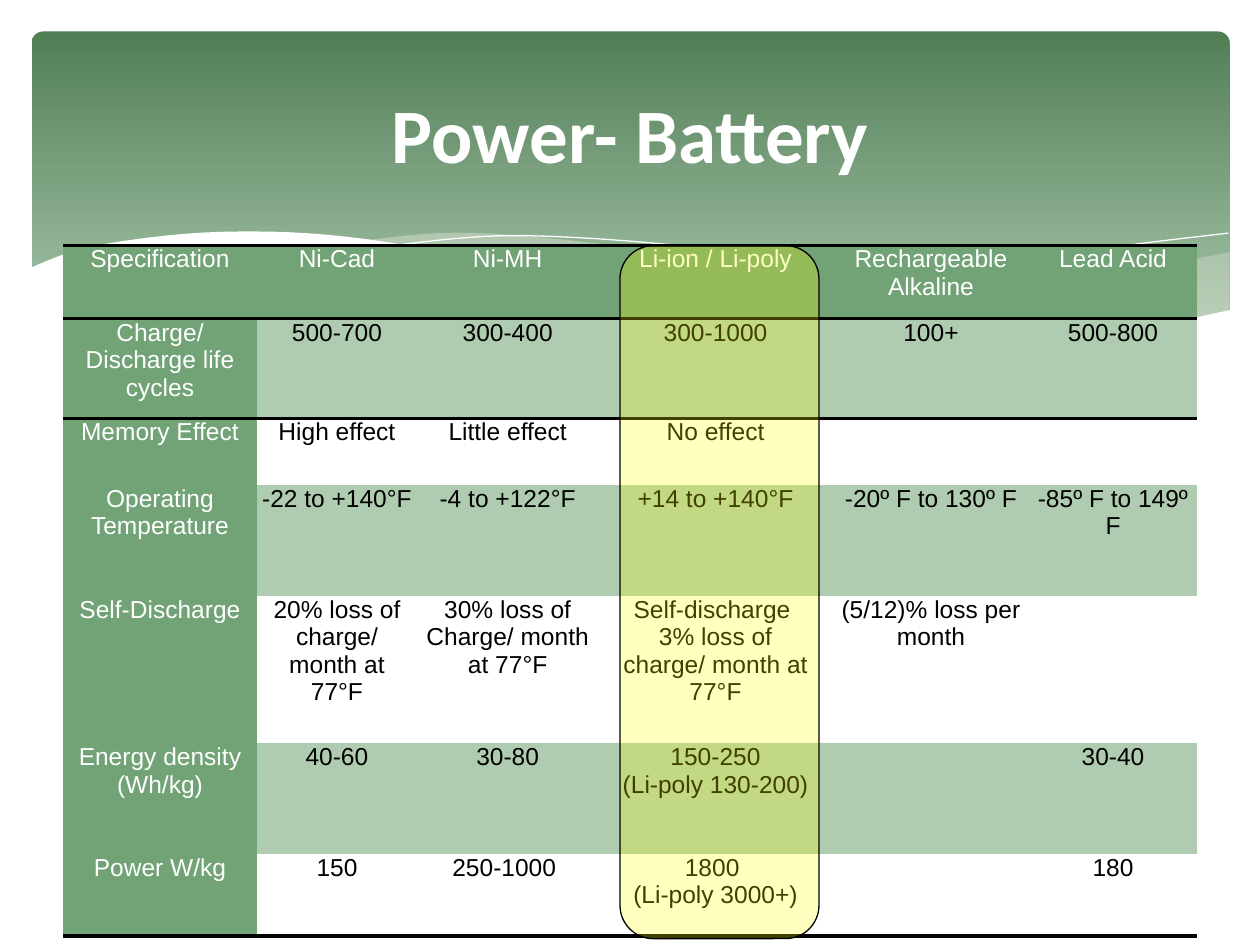
from dataclasses import dataclass
from typing import Optional

import pptx
import pptx.dml.color
import pptx.enum.shapes
import pptx.enum.text
import pptx.oxml
import pptx.oxml.ns
import pptx.util
from pptx.util import Inches

WHITE, BLACK = "FFFFFF", "000000"
GREEN, PALE_GREEN, MIST = "72A376", "B0CCB0", "EAEBDE"
NO_TABLE_STYLE = "{2D5ABB26-0587-4C30-8999-92F81FD0307C}"
CURVE_STEPS = 8

Point = tuple[float, float]


@dataclass
class Wave:
    edges: list[list[Point]]
    fill: Optional[str] = None
    alpha: int = 100


@dataclass
class Row:
    height: float
    texts: list[str]
    fill: Optional[str] = None
    top_rule: bool = False
    bottom_rule: bool = False


WAVES = [
    Wave([[(9.76, 2), (8.61, 2.23), (6.61, 2.65)],
          [(6.61, 2.65), (8.1, 2.78), (9.76, 2.47)]], MIST, 29),
    Wave([[(8.93, 2.73), (7.41, 2.47), (5.41, 2.03), (3.8, 1.85), (2.86, 1.91)],
          [(2.86, 1.91), (4.49, 2.22), (6.34, 2.61), (7.85, 2.78), (8.93, 2.73)]], MIST, 40),
    Wave([[(3.09, 1.95), (4.16, 1.87), (5.82, 2), (7.6, 2.33), (9.07, 2.72)]]),
    Wave([[(6.13, 2.57), (7.48, 2.23), (8.66, 1.99), (9.75, 1.85)]]),
    Wave([[(9.77, 2.46), (8.09, 2.77), (6.48, 2.62), (4.47, 2.2), (2.92, 1.9),
           (1.77, 1.84), (0.76, 1.95), (0.23, 2.13)],
          [(0.23, 3.29), (9.77, 3.29)]], WHITE),
]

COLUMN_WIDTHS = [1.54, 1.27, 1.44, 1.86, 1.56, 1.33]
ROWS = [
    Row(0.58, ["Specification", "Ni-Cad", "Ni-MH", "Li-ion / Li-poly",
               "Rechargeable Alkaline", "Lead Acid"], GREEN, True, True),
    Row(0.79, ["Charge/Discharge life cycles", "500-700", "300-400", "300-1000",
               "100+", "500-800"], PALE_GREEN, top_rule=True),
    Row(0.53, ["Memory Effect", "High effect", "Little effect", "No effect", "", ""]),
    Row(0.88, ["Operating Temperature", "-22 to +140°F", "-4 to +122°F", "+14 to +140°F",
               "-20º F to 130º F", "-85º F to 149º F"], PALE_GREEN),
    Row(1.17, ["Self-Discharge", "20% loss of charge/ month at 77°F",
               "30% loss of\nCharge/ month at 77°F",
               "Self-discharge \n3% loss of\ncharge/ month at 77°F",
               "(5/12)% loss per month", ""], WHITE),
    Row(0.88, ["Energy density\n(Wh/kg)", "40-60", "30-80",
               "150-250\n(Li-poly 130-200)", "", "30-40"], PALE_GREEN),
    Row(0.65, ["Power W/kg", "150", "250-1000 ", "1800 \n(Li-poly 3000+)", "", "180"],
        bottom_rule=True),
]


def color(value: str):
    return pptx.dml.color.RGBColor.from_string(value)


def paint(fill, value: Optional[str], alpha: int = 100) -> None:
    if value is None:
        fill.background()
        return
    fill.solid()
    fill.fore_color.rgb = color(value)
    if alpha < 100:
        tint = fill._xPr.find(".//" + pptx.oxml.ns.qn("a:srgbClr"))
        tint.append(pptx.oxml.parse_xml(
            f'<a:alpha {pptx.oxml.ns.nsdecls("a")} val="{alpha * 1000}"/>'))


def write(frame, text: str, *, size: float, font: str, ink: str, bold: bool = False) -> None:
    frame.word_wrap = True
    frame.text = text
    for para in frame.paragraphs:
        para.alignment = pptx.enum.text.PP_ALIGN.CENTER
        for span in para.runs:
            span.font.size = pptx.util.Pt(size)
            span.font.name = font
            span.font.bold = bold
            span.font.color.rgb = color(ink)


def add_round_box(page, left: float, top: float, width: float, height: float, corner: float):
    box = page.shapes.add_shape(pptx.enum.shapes.MSO_SHAPE.ROUNDED_RECTANGLE,
                                Inches(left), Inches(top), Inches(width), Inches(height))
    box.adjustments[0] = corner
    box.shadow.inherit = False
    return box


def add_banner(page) -> None:
    banner = add_round_box(page, 0.25, 0.25, 9.51, 2.7, 0.034)
    banner.line.fill.background()
    banner.fill.gradient()
    banner.fill.gradient_angle = 270
    for stop, (position, value) in zip(banner.fill.gradient_stops,
                                       [(0, "527E56"), (0.9, "AAC8AD")]):
        stop.position = position
        stop.color.rgb = color(value)


def blend(a: float, b: float, c: float, d: float, t: float) -> float:
    return b + t / 2 * (c - a + t * (2 * a - 5 * b + 4 * c - d + t * (3 * (b - c) + d - a)))


def smooth_curve(knots: list[Point]) -> list[Point]:
    padded = [knots[0], *knots, knots[-1]]
    curve = [knots[0]]
    for group in zip(padded, padded[1:], padded[2:], padded[3:]):
        xs, ys = zip(*group)
        for step in range(1, CURVE_STEPS + 1):
            t = step / CURVE_STEPS
            curve.append((blend(*xs, t), blend(*ys, t)))
    return curve


def add_wave(page, wave: Wave) -> None:
    start, *rest = [(Inches(x), Inches(y))
                    for edge in wave.edges for x, y in smooth_curve(edge)]
    builder = page.shapes.build_freeform(*start)
    builder.add_line_segments(rest, close=wave.fill is not None)
    shape = builder.convert_to_shape()
    shape.shadow.inherit = False
    paint(shape.fill, wave.fill, wave.alpha)
    paint(shape.line.fill, None if wave.fill else WHITE)
    if wave.fill is None:
        shape.line.width = 0


def add_rule(cell, side: str) -> None:
    cell._tc.get_or_add_tcPr().append(pptx.oxml.parse_xml(
        f'<a:{side} {pptx.oxml.ns.nsdecls("a")} w="{pptx.util.Pt(2.25)}">'
        f'<a:solidFill><a:srgbClr val="{BLACK}"/></a:solidFill></a:{side}>'))


def fill_cell(cell, row: Row, text: str, is_heading: bool) -> None:
    cell.margin_left = cell.margin_right = Inches(0.03)
    cell.margin_top = cell.margin_bottom = 0
    if row.top_rule:
        add_rule(cell, "lnT")
    if row.bottom_rule:
        add_rule(cell, "lnB")
    paint(cell.fill, GREEN if is_heading else row.fill)
    if text:
        write(cell.text_frame, text, size=14, font="Arial", ink=WHITE if is_heading else BLACK)


def add_battery_table(page) -> None:
    frame = page.shapes.add_table(len(ROWS), len(COLUMN_WIDTHS), Inches(0.5), Inches(1.95),
                                  Inches(sum(COLUMN_WIDTHS)),
                                  Inches(sum(row.height for row in ROWS)))
    table = frame.table
    table.horz_banding = table.first_row = False
    frame.element.find(".//" + pptx.oxml.ns.qn("a:tableStyleId")).text = NO_TABLE_STYLE
    for column, width in zip(table.columns, COLUMN_WIDTHS):
        column.width = Inches(width)
    for row_index, row in enumerate(ROWS):
        table.rows[row_index].height = Inches(row.height)
        for column_index, text in enumerate(row.texts):
            fill_cell(table.cell(row_index, column_index), row, text,
                      row_index == 0 or column_index == 0)


def add_highlight(page) -> None:
    highlight = add_round_box(page, 2.96, 3.91, 5.5, 1.58, 0.167)
    highlight.rotation = 90
    paint(highlight.fill, "FFFF00", 25)
    paint(highlight.line.fill, BLACK)
    highlight.line.width = pptx.util.Pt(0.75)


def main() -> None:
    deck = pptx.Presentation()
    deck.slide_width, deck.slide_height = Inches(10), Inches(7.5)
    page = deck.slides.add_slide(deck.slide_layouts[5])
    add_banner(page)
    for wave in WAVES:
        add_wave(page, wave)
    title = page.shapes.title
    title.left, title.top = Inches(0.5), Inches(0.37)
    title.width, title.height = Inches(9), Inches(1.37)
    title.text_frame.vertical_anchor = pptx.enum.text.MSO_ANCHOR.MIDDLE
    write(title.text_frame, "Power- Battery", size=44, font="Calibri", ink=WHITE, bold=True)
    title.element.getparent().append(title.element)
    add_battery_table(page)
    add_highlight(page)
    deck.save("out.pptx")


if __name__ == "__main__":
    main()
